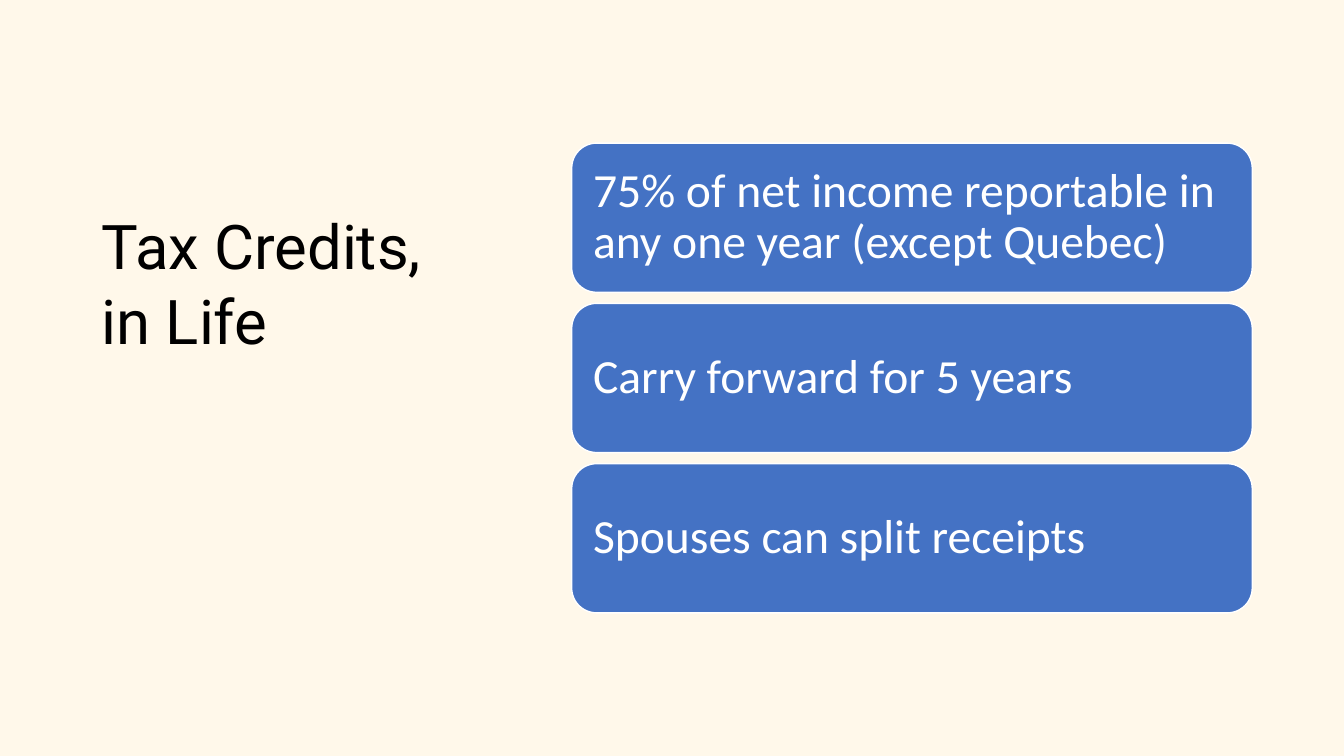
import pptx
import pptx.util
import pptx.dml.color
import pptx.enum.shapes
import pptx.enum.text

Inches = pptx.util.Inches
Pt = pptx.util.Pt
ANCHOR = pptx.enum.text.MSO_ANCHOR

TITLE_LINES = ["Tax Credits,", "in Life"]
RULES = [
    "75% of net income reportable in any one year (except Quebec)",
    "Carry forward for 5 years",
    "Spouses can split receipts",
]
CARD_TOP, CARD_HEIGHT, CARD_PITCH = 1.42, 1.48, 1.59


def rgb(color):
    return pptx.dml.color.RGBColor.from_string(color)


def add_lines(tf, lines, font, size, color, anchor, space_after=0):
    """Fill a text frame with one left-aligned paragraph per line."""
    tf.word_wrap = True
    tf.vertical_anchor = anchor
    for i, line in enumerate(lines):
        p = tf.paragraphs[0] if i == 0 else tf.add_paragraph()
        p.alignment = pptx.enum.text.PP_ALIGN.LEFT
        p.line_spacing = 0.9
        p.space_after = Pt(space_after)
        r = p.add_run()
        r.text = line
        r.font.name = font
        r.font.size = Pt(size)
        r.font.color.rgb = rgb(color)


def add_title(s):
    sp = s.shapes.add_textbox(Inches(0.91), Inches(2.32), Inches(4.34), Inches(1.28))
    add_lines(sp.text_frame, TITLE_LINES, "Roboto", 44, "000000", ANCHOR.BOTTOM, space_after=6)


def add_card(s, top, text):
    sp = s.shapes.add_shape(
        pptx.enum.shapes.MSO_SHAPE.ROUNDED_RECTANGLE,
        Inches(5.67), Inches(top), Inches(6.75), Inches(CARD_HEIGHT))
    sp.shadow.inherit = False
    sp.fill.solid()
    sp.fill.fore_color.rgb = rgb("4472C4")
    sp.line.color.rgb = rgb("FFFFFF")
    sp.line.width = Pt(1)
    tf = sp.text_frame
    tf.margin_left = tf.margin_right = tf.margin_top = tf.margin_bottom = Inches(0.14)
    add_lines(tf, [text], "Calibri", 34, "FFFFFF", ANCHOR.MIDDLE)


def main():
    prs = pptx.Presentation()
    prs.slide_width, prs.slide_height = Inches(13.33), Inches(7.5)
    s = prs.slides.add_slide(prs.slide_layouts[6])
    s.background.fill.solid()
    s.background.fill.fore_color.rgb = rgb("FFF8EA")
    add_title(s)
    for i, rule in enumerate(RULES):
        add_card(s, CARD_TOP + i * CARD_PITCH, rule)
    prs.save("out.pptx")


if __name__ == "__main__":
    main()
